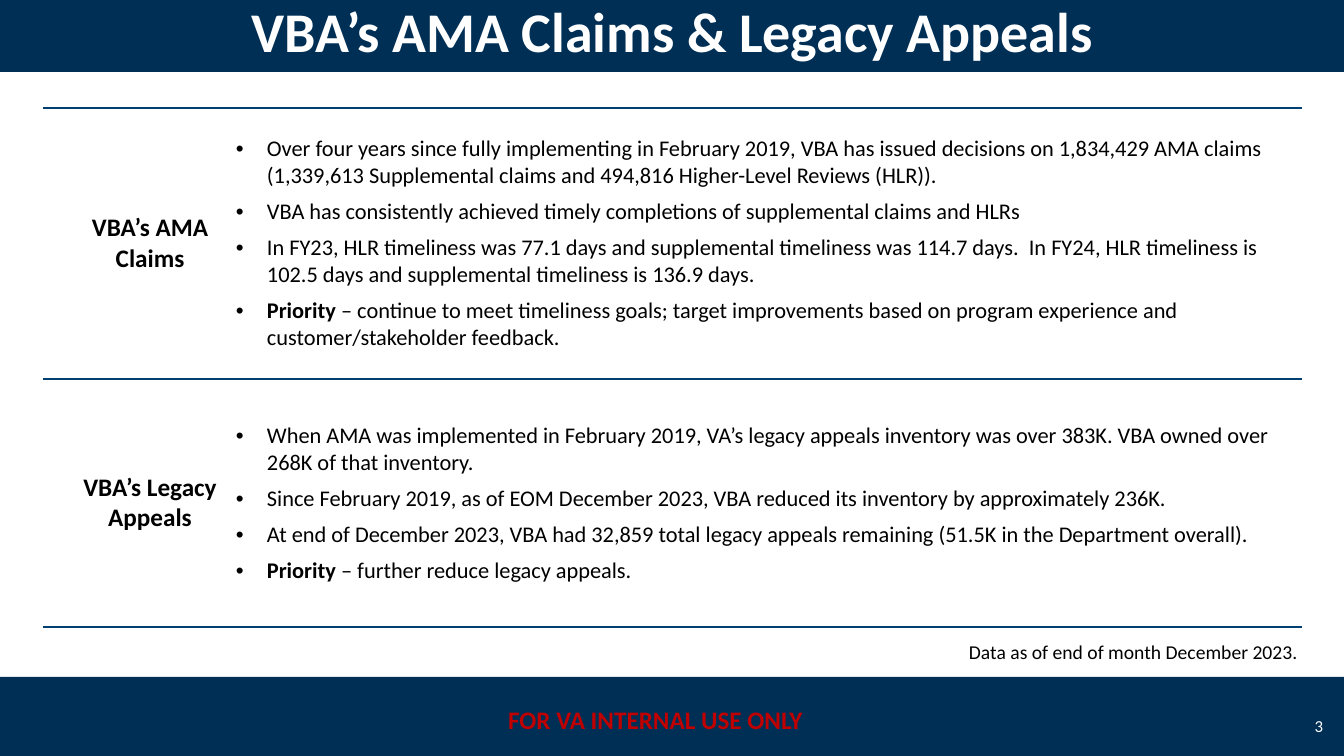
import pptx
import pptx.dml.color
import pptx.enum.shapes
import pptx.enum.text
import pptx.oxml
import pptx.oxml.ns
import pptx.util

RGBColor = pptx.dml.color.RGBColor
ALIGN = pptx.enum.text.PP_ALIGN
ANCHOR = pptx.enum.text.MSO_ANCHOR

NAVY = RGBColor(0x00, 0x2F, 0x56)
RULE_BLUE = RGBColor(0x00, 0x3F, 0x72)
RED = RGBColor(0xC0, 0x00, 0x00)
WHITE = RGBColor(0xFF, 0xFF, 0xFF)
BLACK = RGBColor(0x00, 0x00, 0x00)
FONT = "Calibri"

TITLE = "VBA’s AMA Claims & Legacy Appeals"
NOTICE = "FOR VA INTERNAL USE ONLY"
PAGE_NUMBER = "3"
DATA_NOTE = "Data as of end of month December 2023."

# Each section: label, plain bullets, text of the closing priority bullet
SECTIONS = [
    ("VBA’s AMA Claims",
     ["Over four years since fully implementing in February 2019, VBA has issued decisions on "
      "1,834,429 AMA claims (1,339,613 Supplemental claims and 494,816 Higher-Level Reviews (HLR)).",
      "VBA has consistently achieved timely completions of supplemental claims and HLRs",
      "In FY23, HLR timeliness was 77.1 days and supplemental timeliness was 114.7 days.  "
      "In FY24, HLR timeliness is 102.5 days and supplemental timeliness is 136.9 days."],
     " – continue to meet timeliness goals; target improvements based on program experience "
     "and customer/stakeholder feedback."),
    ("VBA’s Legacy Appeals",
     ["When AMA was implemented in February 2019, VA’s legacy appeals inventory was over 383K. "
      "VBA owned over 268K of that inventory.",
      "Since February 2019, as of EOM December 2023, VBA reduced its inventory by approximately 236K.",
      "At end of December 2023, VBA had 32,859 total legacy appeals remaining "
      "(51.5K in the Department overall)."],
     " – further reduce legacy appeals."),
]

SLIDE_WIDTH, SLIDE_HEIGHT = 1344, 756
TITLE_BAND_HEIGHT, FOOTER_TOP = 72, 677
TABLE_LEFT, TABLE_TOP = 43, 108
COLUMN_WIDTHS = [22, 167, 1070]
ROW_HEIGHTS = [271, 248]
CELL_MARGIN, LABEL_MARGIN = 4, 7
BULLET_INDENT = 31


def px(length):
    return pptx.util.Emu(round(length * 914400 / 100.8))


def write_text(frame, paragraphs, size=16, color=BLACK, bold=False, align=ALIGN.LEFT,
               bullet=False, space_after=0):
    """Fill a frame; each paragraph is a string or a list of (text, bold) runs."""
    frame.word_wrap = True
    for index, runs in enumerate(paragraphs):
        paragraph = frame.paragraphs[0] if index == 0 else frame.add_paragraph()
        if bullet:
            add_bullet(paragraph)
        paragraph.alignment = align
        paragraph.space_after = pptx.util.Pt(space_after)
        for text, run_bold in [(runs, bold)] if isinstance(runs, str) else runs:
            run = paragraph.add_run()
            run.text = text
            run.font.name = FONT
            run.font.size = pptx.util.Pt(size)
            run.font.bold = run_bold
            run.font.color.rgb = color


def add_bullet(paragraph):
    properties = paragraph._p.get_or_add_pPr()
    properties.set("marL", str(px(BULLET_INDENT)))
    properties.set("indent", str(-px(BULLET_INDENT)))
    for tag, name, value in (("a:buFont", "typeface", "Arial"), ("a:buChar", "char", "•")):
        element = pptx.oxml.parse_xml(f'<{tag} {pptx.oxml.ns.nsdecls("a")} {name}="{value}"/>')
        properties.append(element)


def add_band(slide, left, top, width, height):
    band = slide.shapes.add_shape(pptx.enum.shapes.MSO_SHAPE.RECTANGLE,
                                  px(left), px(top), px(width), px(height))
    band.shadow.inherit = False
    band.fill.solid()
    band.fill.fore_color.rgb = NAVY
    band.line.fill.background()
    return band


def add_text(slide, left, top, width, height, text, anchor=ANCHOR.TOP, **text_format):
    box = slide.shapes.add_textbox(px(left), px(top), px(width), px(height))
    box.text_frame.vertical_anchor = anchor
    write_text(box.text_frame, [text], **text_format)


def style_cell(cell, left_margin):
    """Clear the fill, rule the top and bottom, and centre the text vertically."""
    cell.fill.background()
    cell.vertical_anchor = ANCHOR.MIDDLE
    cell.margin_left = px(left_margin)
    cell.margin_right = cell.margin_top = cell.margin_bottom = px(CELL_MARGIN)
    properties = cell._tc.get_or_add_tcPr()
    rule = f'<a:solidFill><a:srgbClr val="{RULE_BLUE}"/></a:solidFill>'
    sides = [("lnL", "<a:noFill/>"), ("lnR", "<a:noFill/>"), ("lnT", rule), ("lnB", rule)]
    for index, (side, line_fill) in enumerate(sides):
        properties.insert(index, pptx.oxml.parse_xml(
            f'<a:{side} {pptx.oxml.ns.nsdecls("a")} w="{pptx.util.Pt(1)}">{line_fill}</a:{side}>'))


def add_sections(slide):
    table = slide.shapes.add_table(
        len(SECTIONS), len(COLUMN_WIDTHS), px(TABLE_LEFT), px(TABLE_TOP),
        px(sum(COLUMN_WIDTHS)), px(sum(ROW_HEIGHTS))).table
    table.first_row = table.horz_banding = False
    for column, width in zip(table.columns, COLUMN_WIDTHS):
        column.width = px(width)
    for row, height, (label, bullets, priority) in zip(table.rows, ROW_HEIGHTS, SECTIONS):
        row.height = px(height)
        margin_cell, label_cell, bullet_cell = row.cells
        style_cell(margin_cell, CELL_MARGIN)
        style_cell(label_cell, LABEL_MARGIN)
        style_cell(bullet_cell, CELL_MARGIN)
        write_text(label_cell.text_frame, [label], size=18, bold=True, align=ALIGN.CENTER)
        write_text(bullet_cell.text_frame, bullets + [[("Priority", True), (priority, False)]],
                   bullet=True, space_after=6)


def main():
    presentation = pptx.Presentation()
    presentation.slide_width = px(SLIDE_WIDTH)
    presentation.slide_height = px(SLIDE_HEIGHT)
    slide = presentation.slides.add_slide(presentation.slide_layouts[6])

    add_band(slide, 0, FOOTER_TOP, SLIDE_WIDTH, SLIDE_HEIGHT - FOOTER_TOP)
    add_band(slide, 0, 0, SLIDE_WIDTH, TITLE_BAND_HEIGHT)
    notice = add_band(slide, 437, 699, 437, 40)
    notice.text_frame.vertical_anchor = ANCHOR.TOP
    write_text(notice.text_frame, [NOTICE], size=18, color=RED, bold=True, align=ALIGN.CENTER)
    add_text(slide, 1020, 706, 313, 40, PAGE_NUMBER, anchor=ANCHOR.MIDDLE,
             size=12, color=WHITE, align=ALIGN.RIGHT)
    add_text(slide, 0, 0, SLIDE_WIDTH, 60, TITLE, anchor=ANCHOR.MIDDLE,
             size=40, color=WHITE, bold=True, align=ALIGN.CENTER)
    add_sections(slide)
    add_text(slide, 959, 635, 353, 34, DATA_NOTE, size=14)
    presentation.save("out.pptx")


if __name__ == "__main__":
    main()
